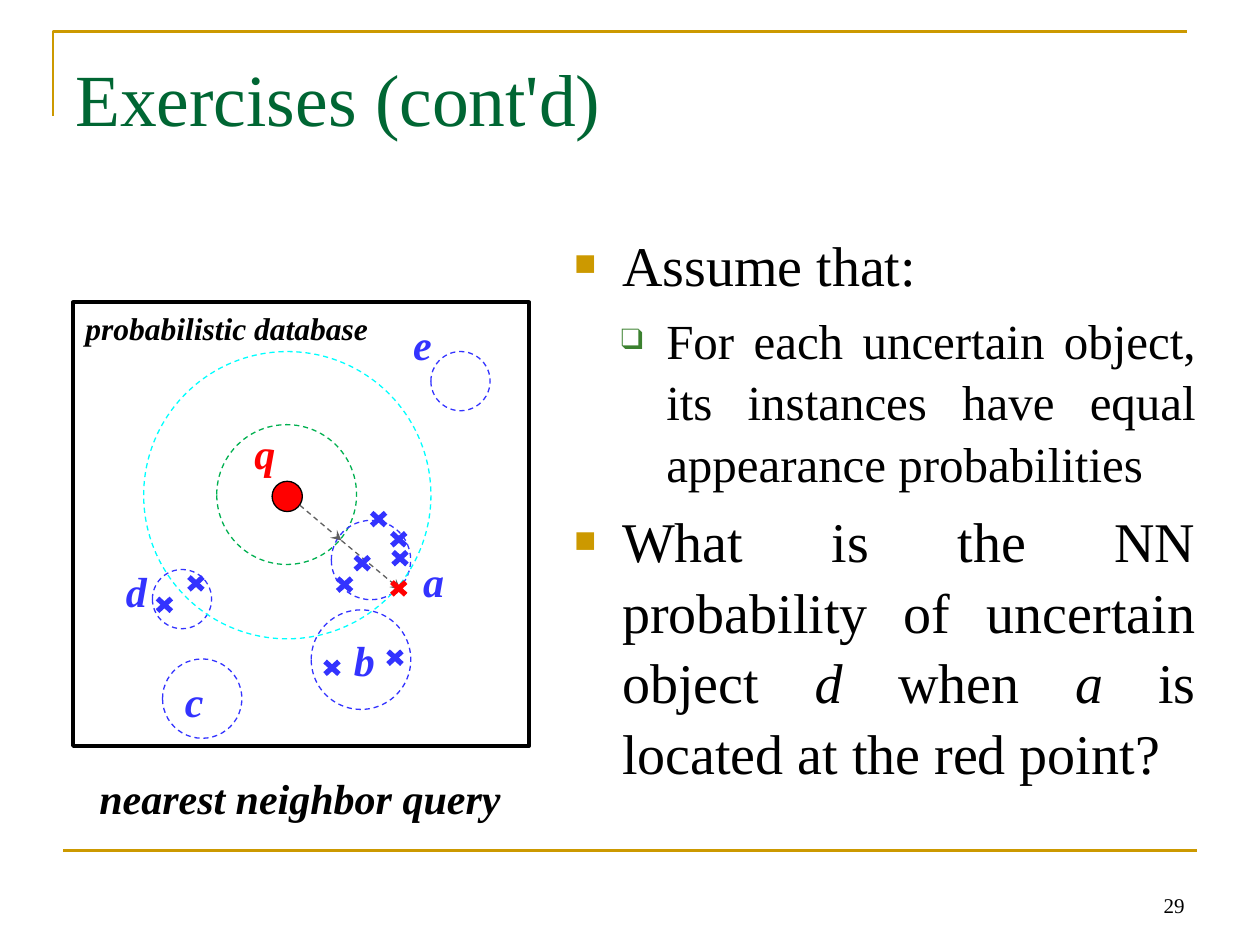
import pptx
import pptx.util
import pptx.dml.color
import pptx.enum.dml
import pptx.enum.shapes
import pptx.enum.text
import pptx.oxml
import pptx.oxml.ns
from lxml import etree

Inches = pptx.util.Inches
Pt = pptx.util.Pt
ALIGN = pptx.enum.text.PP_ALIGN
ANCHOR = pptx.enum.text.MSO_ANCHOR
SHAPE = pptx.enum.shapes.MSO_SHAPE
qn = pptx.oxml.ns.qn

FONT = "Times New Roman"
COLORS = {
    "gold": "CC9900", "title": "006633", "black": "000000", "red": "FF0000",
    "blue": "3333FF", "green": "00B050", "cyan": "00FFFF", "gray": "5F5F5F",
    "leaf": "3B812F",
}
BOLD_ITALIC = {"bold": True, "italic": True}
LEVELS = [
    {"size": 32, "left": 0.38, "hang": 0.38, "mark": "■", "mark_color": "gold", "mark_size": 65},
    {"size": 28, "left": 0.73, "hang": 0.36, "mark": "❑", "mark_color": "leaf", "mark_size": 60},
]
REGIONS = [
    (1.72, 3.37, 1.11, "green"),
    (1.21, 4.52, 0.47, "blue"),
    (1.29, 5.23, 0.63, "blue"),
    (2.63, 4.13, 0.63, "blue"),
    (2.47, 4.84, 0.79, "blue"),
    (3.42, 2.79, 0.47, "blue"),
    (1.14, 2.79, 2.28, "cyan"),
]
OBJECT_LABELS = [
    ("q", 1.92, 3.34, "red"),
    ("a", 3.26, 4.36, "blue"),
    ("b", 2.71, 4.99, "blue"),
    ("c", 1.37, 5.31, "blue"),
    ("d", 0.9, 4.44, "blue"),
    ("e", 3.18, 2.48, "blue"),
]
INSTANCES = [
    (2.95, 4.07, "blue"), (3.11, 4.23, "blue"), (2.82, 4.42, "blue"),
    (2.68, 4.59, "blue"), (3.11, 4.62, "red"), (3.12, 4.38, "blue"),
    (1.5, 4.58, "blue"), (2.58, 5.25, "blue"), (3.08, 5.17, "blue"),
    (1.25, 4.75, "blue"),
]
QUESTIONS = [
    (0, [("Assume that:", False)]),
    (1, [("For each uncertain object, its instances have equal appearance probabilities", False)]),
    (0, [("What is the NN probability of uncertain object ", False), ("d", True),
         (" when ", False), ("a", True), (" is located at the red point?", False)]),
]


def rgb(color):
    return pptx.dml.color.RGBColor.from_string(COLORS[color])


def apply_formats(target, formats):
    for name, value in formats.items():
        setattr(target, name, value)


def style_line(line, color, width, dashed=False):
    line.color.rgb = rgb(color)
    line.width = Pt(width)
    if dashed:
        line.dash_style = pptx.enum.dml.MSO_LINE.DASH


def add_run(paragraph, text, size, color, **formats):
    run = paragraph.add_run()
    run.text = text
    apply_formats(run.font, {"name": FONT, "size": Pt(size), **formats})
    run.font.color.rgb = rgb(color)


def add_frame(slide, box, **formats):
    frame = slide.shapes.add_textbox(*map(Inches, box)).text_frame
    apply_formats(frame, {"word_wrap": True, **formats})
    return frame


def add_label(slide, text, box, size, color, align=ALIGN.LEFT, font=BOLD_ITALIC, **formats):
    paragraph = add_frame(slide, box, **formats).paragraphs[0]
    paragraph.alignment = align
    add_run(paragraph, text, size, color, **font)


def add_outline(slide, kind, box, color, width, dashed=False, fill=None):
    outline = slide.shapes.add_shape(kind, *map(Inches, box))
    outline.shadow.inherit = False
    if fill:
        outline.fill.solid()
        outline.fill.fore_color.rgb = rgb(fill)
    else:
        outline.fill.background()
    style_line(outline.line, color, width, dashed)


def add_segment(shapes, start, end, color, width, dashed=False, arrow=False):
    segment = shapes.add_connector(
        pptx.enum.shapes.MSO_CONNECTOR.STRAIGHT, *map(Inches, (*start, *end)))
    style_line(segment.line, color, width, dashed)
    if arrow:
        etree.SubElement(segment.line._get_or_add_ln(), qn("a:tailEnd"), type="stealth")
    etree.SubElement(segment._element.spPr, qn("a:effectLst"))


def add_instance(slide, left, top, color):
    right, bottom = left + 0.11, top + 0.1
    cross = slide.shapes.add_group_shape()
    add_segment(cross.shapes, (right, top), (left, bottom), color, 3)
    add_segment(cross.shapes, (left, top), (right, bottom), color, 3)


def add_corner_rule(slide):
    builder = slide.shapes.build_freeform(Inches(0.42), Inches(0.92))
    builder.add_line_segments(
        [(Inches(0.42), Inches(0.25)), (Inches(9.42), Inches(0.25))], close=False)
    corner = builder.convert_to_shape()
    corner.shadow.inherit = False
    corner.fill.background()
    style_line(corner.line, "gold", 1.5)


def add_bullet(paragraph, level):
    properties = paragraph._p.get_or_add_pPr()
    properties.set("marL", str(Inches(level["left"])))
    properties.set("indent", str(-Inches(level["hang"])))
    spacing = etree.SubElement(properties, qn("a:spcBef"))
    etree.SubElement(spacing, qn("a:spcPct"), val="20000")
    color = etree.SubElement(properties, qn("a:buClr"))
    etree.SubElement(color, qn("a:srgbClr"), val=COLORS[level["mark_color"]])
    etree.SubElement(properties, qn("a:buSzPct"), val=str(level["mark_size"] * 1000))
    etree.SubElement(properties, qn("a:buFont"), typeface=FONT)
    etree.SubElement(properties, qn("a:buChar"), char=level["mark"])


def add_questions(slide):
    frame = add_frame(slide, (4.46, 1.75, 5.13, 4.95))
    for index, (depth, pieces) in enumerate(QUESTIONS):
        paragraph = frame.add_paragraph() if index else frame.paragraphs[0]
        level = LEVELS[depth]
        apply_formats(paragraph, {"alignment": ALIGN.JUSTIFY, "level": depth, "line_spacing": 1.05})
        add_bullet(paragraph, level)
        for text, italic in pieces:
            add_run(paragraph, text, level["size"], "black", italic=italic)


def add_diagram(slide):
    add_outline(slide, SHAPE.RECTANGLE, (0.58, 2.4, 3.62, 3.52), "black", 2.25)
    add_outline(slide, SHAPE.OVAL, (2.16, 3.82, 0.24, 0.24), "black", 0.75, fill="red")
    for left, top, size, color in REGIONS:
        add_outline(slide, SHAPE.OVAL, (left, top, size, size), color, 0.75, dashed=True)
    route = [(2.38, 4.01), (2.71, 4.29), (3.18, 4.68)]
    for start, end in zip(route, route[1:]):
        add_segment(slide.shapes, start, end, "gray", 0.75, dashed=True, arrow=True)
    for name, left, top, color in OBJECT_LABELS:
        add_label(slide, name, (left, top, 0.37, 0.5), 24, color, word_wrap=False)
    add_label(slide, "probabilistic database", (0.58, 2.4, 2.52, 0.4), 18, "black")
    add_label(slide, "nearest neighbor query", (0.69, 6.08, 3.42, 0.5), 24, "black",
              word_wrap=False)
    for instance in INSTANCES:
        add_instance(slide, *instance)


def main():
    deck = pptx.Presentation()
    apply_formats(deck, {"slide_width": Inches(10), "slide_height": Inches(7.5)})
    slide = deck.slides.add_slide(deck.slide_layouts[6])
    add_corner_rule(slide)
    add_segment(slide.shapes, (0.5, 6.75), (9.5, 6.75), "gold", 1.5)
    add_label(slide, "29", (7.17, 6.83, 2.33, 0.5), 12, "black", ALIGN.RIGHT, {},
              vertical_anchor=ANCHOR.BOTTOM)
    add_label(slide, "Exercises (cont'd)", (0.5, 0.3, 9, 1.25), 42, "title", font={},
              margin_top=Inches(0.12))
    add_questions(slide)
    add_diagram(slide)
    deck.save("out.pptx")


if __name__ == "__main__":
    main()
